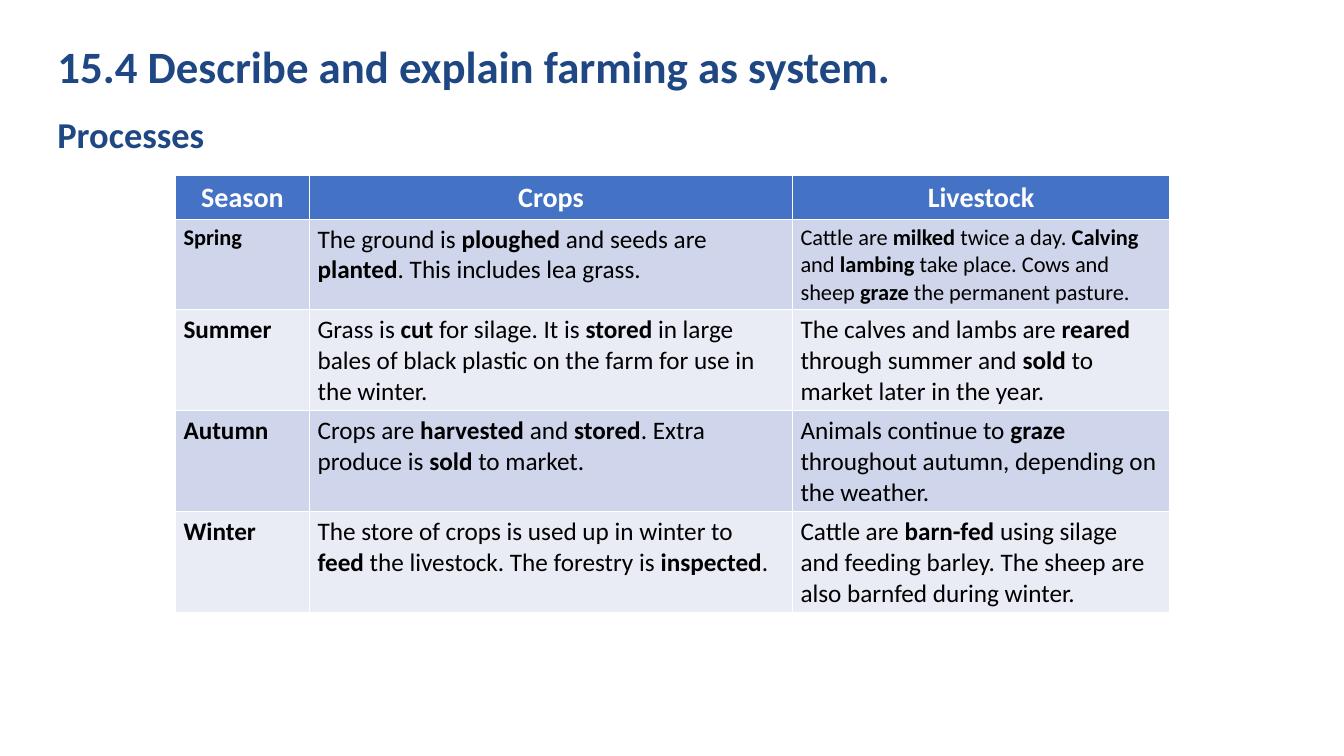
from pptx import Presentation
from pptx.dml.color import RGBColor
from pptx.enum.text import MSO_ANCHOR, MSO_AUTO_SIZE, PP_ALIGN
from pptx.util import Inches, Pt

LEFT, CENTER = PP_ALIGN.LEFT, PP_ALIGN.CENTER
TOP = MSO_ANCHOR.TOP
FIT, FIXED = MSO_AUTO_SIZE.SHAPE_TO_FIT_TEXT, MSO_AUTO_SIZE.NONE
NAVY, BLUE, WHITE, BLACK = "1E4783", "4472C4", "FFFFFF", "000000"
BANDS = ("CFD5EA", "E9EBF5")

WIDTHS = (1.33, 4.79, 3.74)
HEIGHTS = (0.43, 0.9, 1, 1, 1)
HEADS = ("Season", "Crops", "Livestock")
SEASONS = (
    ("*Spring*",
     "The ground is *ploughed *and seeds are *planted*. This includes lea grass.",
     "Cattle are *milked *twice a day. *Calving *and *lambing *take place. "
     "Cows and sheep *graze *the permanent pasture."),
    ("*Summer*",
     "Grass is *cut *for silage. It is *stored *in large bales of black plastic "
     "on the farm for use in the winter.",
     "The calves and lambs are *reared *through summer and *sold *to market later in the year."),
    ("*Autumn*",
     "Crops are *harvested *and *stored*. Extra produce is *sold *to market.",
     "Animals continue to *graze *throughout autumn, depending on the weather."),
    ("*Winter*",
     "The store of crops is used up in winter to *feed *the livestock. "
     "The forestry is *inspected*.",
     "Cattle are *barn-fed *using silage and feeding barley. "
     "The sheep are also barnfed during winter."),
)


def color(code):
    return RGBColor.from_string(code)


class Deck:
    face = "Calibri"

    def __init__(self, slide):
        self.slide = slide

    def style(self, para, size, code, bold=None, align=LEFT):
        para.alignment = align
        font = para.font
        font.name, font.size, font.bold = self.face, Pt(size), bold
        font.color.rgb = color(code)

    def place(self, shape, left, top, width, height):
        shape.left, shape.top = Inches(left), Inches(top)
        shape.width, shape.height = Inches(width), Inches(height)

    def title(self, text, *box):
        shape = self.slide.shapes.title
        self.place(shape, *box)
        frame = shape.text_frame
        frame.text = text
        frame.vertical_anchor, frame.auto_size = TOP, FIXED
        para = frame.paragraphs[0]
        para.line_spacing = 0.9
        self.style(para, 32, NAVY, True)

    def label(self, text, *box):
        shape = self.slide.shapes.add_textbox(*map(Inches, box))
        frame = shape.text_frame
        frame.text = text
        frame.word_wrap, frame.auto_size = False, FIT
        self.style(frame.paragraphs[0], 26, NAVY, True)

    def cell(self, cell, text, size, code, fill, bold=None, align=LEFT):
        cell.fill.solid()
        cell.fill.fore_color.rgb = color(fill)
        cell.margin_left = cell.margin_right = Inches(0.08)
        cell.margin_top = cell.margin_bottom = Inches(0.05)
        para = cell.text_frame.paragraphs[0]
        self.style(para, size, code, bold, align)
        for i, part in enumerate(text.split("*")):
            if part:
                run = para.add_run()
                run.text = part
                run.font.name, run.font.size = self.face, Pt(size)
                run.font.color.rgb = color(code)
                run.font.bold = bool(bold or i % 2)

    def table(self, left, top):
        box = (left, top, sum(WIDTHS), sum(HEIGHTS))
        grid = self.slide.shapes.add_table(
            len(HEIGHTS), len(WIDTHS), *map(Inches, box)).table
        for col, width in zip(grid.columns, WIDTHS):
            col.width = Inches(width)
        for row, height in zip(grid.rows, HEIGHTS):
            row.height = Inches(height)
        for c, head in enumerate(HEADS):
            self.cell(grid.cell(0, c), head, 20, WHITE, BLUE, True, CENTER)
        for r, season in enumerate(SEASONS):
            for c, text in enumerate(season):
                size = 16 if r == 0 and c != 1 else 18
                self.cell(grid.cell(r + 1, c), text, size, BLACK, BANDS[r % 2])


def main():
    show = Presentation()
    show.slide_width, show.slide_height = Inches(13.33), Inches(7.5)
    deck = Deck(show.slides.add_slide(show.slide_layouts[5]))
    deck.label("Processes", 0.47, 1.06, 1.68, 0.54)
    deck.title("15.4 Describe and explain farming as system.", 0.47, 0.39, 11.5, 0.68)
    deck.table(1.74, 1.74)
    show.save("out.pptx")


if __name__ == "__main__":
    main()
